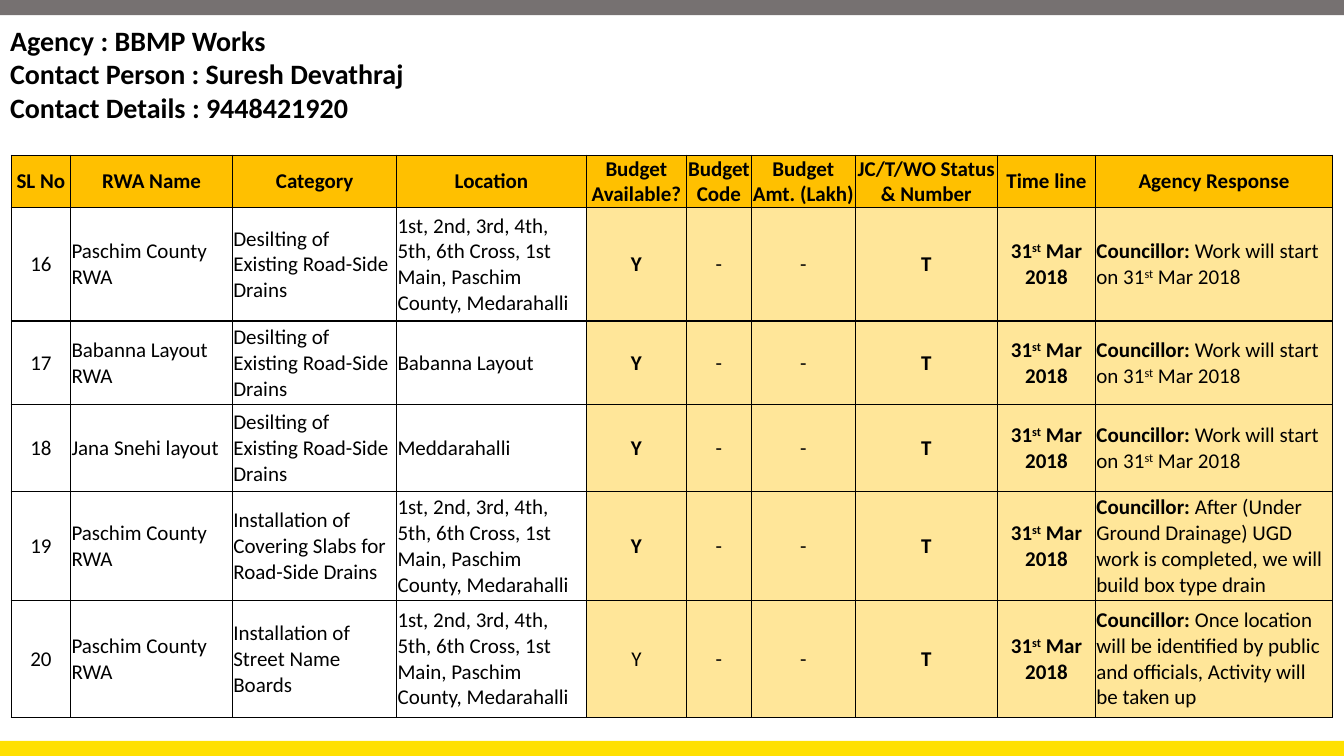
"""Build the agency works status slide with its response table."""
from lxml import etree
from pptx import Presentation
from pptx.dml.color import RGBColor
from pptx.enum.shapes import MSO_SHAPE
from pptx.enum.text import MSO_ANCHOR, MSO_AUTO_SIZE, PP_ALIGN
from pptx.oxml.ns import qn
from pptx.util import Pt

RECTANGLE = MSO_SHAPE.RECTANGLE
MIDDLE, TOP = MSO_ANCHOR.MIDDLE, MSO_ANCHOR.TOP
LEFT, CENTER = PP_ALIGN.LEFT, PP_ALIGN.CENTER
FIT_SHAPE = MSO_AUTO_SIZE.SHAPE_TO_FIT_TEXT

FONT = "Calibri"
BLACK, GRAY, YELLOW = "000000", "767171", "FFE000"
AMBER, CREAM = "FFC000", "FFE699"

HEADING = [
    "Agency : BBMP Works",
    "Contact Person : Suresh Devathraj",
    "Contact Details : 9448421920",
]
COLUMNS = [
    ("SL No", 42.5, CENTER), ("RWA Name", 115.6, LEFT),
    ("Category", 117.3, LEFT), ("Location", 135.4, LEFT),
    ("Budget Available?", 71.6, CENTER), ("Budget Code", 46.4, CENTER),
    ("Budget Amt. (Lakh)", 74.2, CENTER),
    ("JC/T/WO Status & Number", 101.5, CENTER),
    ("Time line", 70.2, CENTER), ("Agency Response", 169.2, LEFT),
]
FIRST_STATUS_COLUMN = 4
ROW_HEIGHTS = [37.3, 81.2, 59.8, 61.9, 77.8, 83.5]

PLAIN, BOLD, RAISED, BOLD_RAISED = (False, False), (True, False), (False, True), (True, True)
CROSSES = "1st, 2nd, 3rd, 4th, 5th, 6th Cross, 1st Main, Paschim County, Medarahalli"
DESILTING = "Desilting of Existing Road-Side Drains"
START = [("Work will start on 31", PLAIN), ("st", RAISED), (" Mar 2018", PLAIN)]
UGD = [("After (Under Ground Drainage) UGD work is completed, "
        "we will build box type drain", PLAIN)]
ONCE = [("Once location will be identified by public and officials, "
         "Activity will be taken up", PLAIN)]
DUE = [("31", BOLD), ("st", BOLD_RAISED), (" Mar 2018", BOLD)]
WORKS = [
    ("16", "Paschim County RWA", DESILTING, CROSSES, BOLD, START),
    ("17", "Babanna Layout RWA", DESILTING, "Babanna Layout", BOLD, START),
    ("18", "Jana Snehi layout", DESILTING, "Meddarahalli", BOLD, START),
    ("19", "Paschim County RWA", "Installation of Covering Slabs for Road-Side Drains",
     CROSSES, BOLD, UGD),
    ("20", "Paschim County RWA", "Installation of Street Name Boards",
     CROSSES, PLAIN, ONCE),
]


def color(value):
    return RGBColor.from_string(value)


def style_font(font, size, bold):
    font.name, font.size, font.bold = FONT, Pt(size), bold
    font.color.rgb = color(BLACK)


def add_bar(page, top, fill):
    bar = page.shapes.add_shape(RECTANGLE, 0, Pt(top), Pt(960), Pt(10.8))
    bar.shadow.inherit = False
    bar.fill.solid()
    bar.fill.fore_color.rgb = color(fill)
    bar.line.fill.background()


def add_borders(cell):
    properties = cell._tc.get_or_add_tcPr()
    for side in ("lnL", "lnR", "lnT", "lnB"):
        border = etree.SubElement(properties, qn("a:" + side), w=str(Pt(1)))
        solid = etree.SubElement(border, qn("a:solidFill"))
        etree.SubElement(solid, qn("a:srgbClr"), val=BLACK)


def fill_cell(cell, spans, align, fill):
    add_borders(cell)
    if fill:
        cell.fill.solid()
        cell.fill.fore_color.rgb = color(fill)
    else:
        cell.fill.background()
    cell.vertical_anchor = MIDDLE
    cell.margin_left = cell.margin_right = cell.margin_top = Pt(0.6)
    cell.margin_bottom = 0
    para = cell.text_frame.paragraphs[0]
    para.alignment = align
    for text, (bold, raised) in spans:
        span = para.add_run()
        span.text = text
        style_font(span.font, 15, bold)
        if raised:
            span._r.get_or_add_rPr().set("baseline", "30000")


def work_cells(work):
    *details, budget_style, response = work
    return [[(text, PLAIN)] for text in details] + [
        [("Y", budget_style)], [("-", PLAIN)], [("-", PLAIN)], [("T", BOLD)],
        DUE, [("Councillor: ", BOLD)] + response,
    ]


def add_works_table(page):
    width = sum(column[1] for column in COLUMNS)
    frame = page.shapes.add_table(len(ROW_HEIGHTS), len(COLUMNS), Pt(8), Pt(110.9),
                                  Pt(width), Pt(sum(ROW_HEIGHTS)))
    table = frame.table
    table.first_row = table.horz_banding = False
    for row, height in zip(table.rows, ROW_HEIGHTS):
        row.height = Pt(height)
    for index, (label, width, align) in enumerate(COLUMNS):
        table.columns[index].width = Pt(width)
        fill_cell(table.cell(0, index), [(label, BOLD)], CENTER, AMBER)
    for row_index, work in enumerate(WORKS, 1):
        for index, spans in enumerate(work_cells(work)):
            fill = CREAM if index >= FIRST_STATUS_COLUMN else None
            fill_cell(table.cell(row_index, index), spans, COLUMNS[index][2], fill)
    for row_index in range(1, len(ROW_HEIGHTS)):
        table.cell(row_index, len(COLUMNS) - 1).margin_right = Pt(1.5)


def format_heading(title):
    title.left, title.top, title.width, title.height = 0, Pt(13), Pt(960), Pt(79.9)
    box = title.text_frame
    box.text = "\n".join(HEADING)
    box.word_wrap = True
    box.auto_size = FIT_SHAPE
    box.vertical_anchor = TOP
    for para in box.paragraphs:
        para.alignment = LEFT
        para.line_spacing = 1.0
        para.space_before = Pt(0)
        for span in para.runs:
            style_font(span.font, 20, True)


def main():
    deck = Presentation()
    deck.slide_width, deck.slide_height = Pt(960), Pt(540)
    page = deck.slides.add_slide(deck.slide_layouts[5])
    add_bar(page, 529.2, YELLOW)
    add_bar(page, 0, GRAY)
    add_works_table(page)
    format_heading(page.shapes.title)
    deck.save("out.pptx")


if __name__ == "__main__":
    main()
